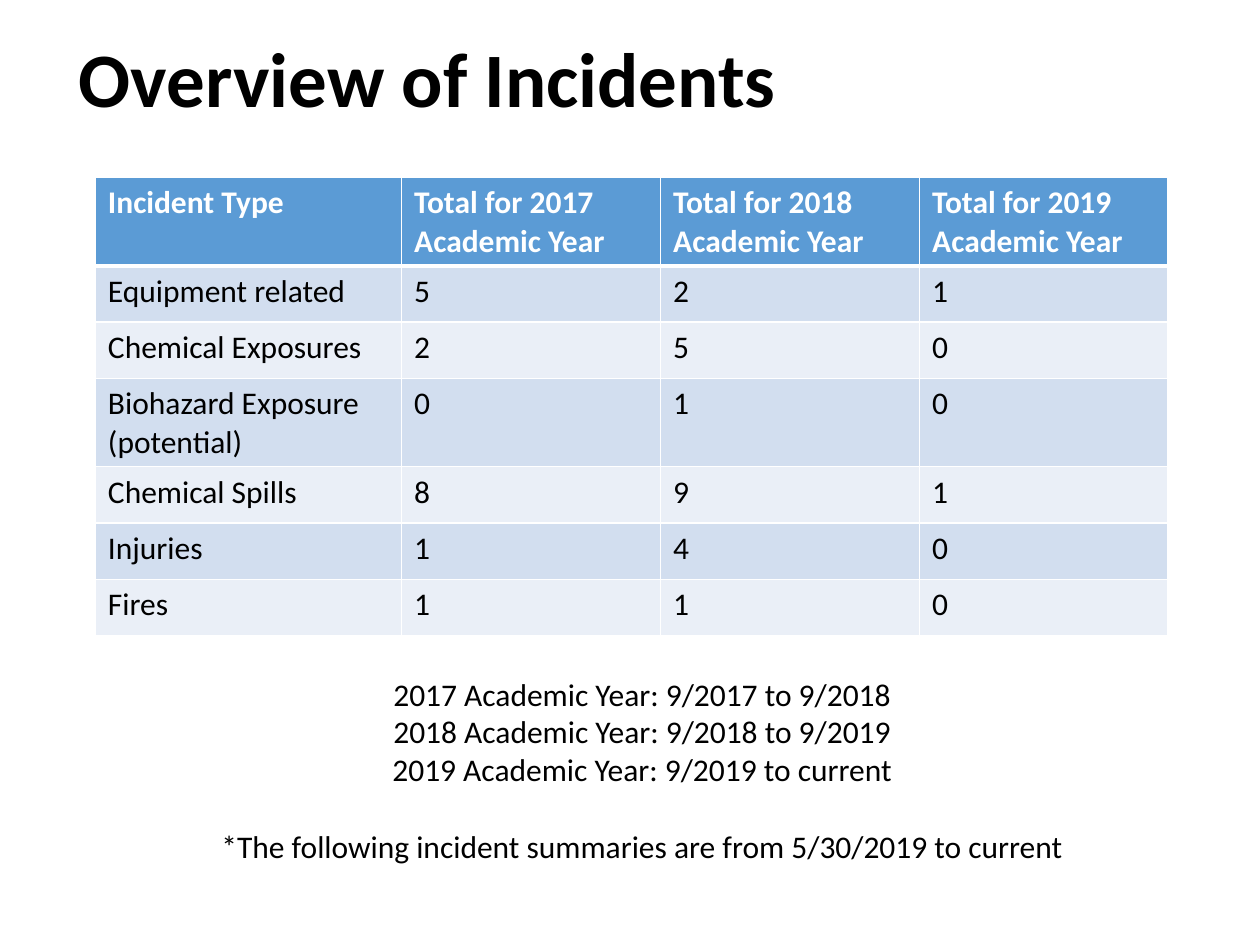
from dataclasses import dataclass

from lxml import etree
from pptx import Presentation
from pptx.dml.color import RGBColor
from pptx.enum.text import MSO_ANCHOR, PP_ALIGN
from pptx.oxml.ns import qn
from pptx.util import Pt

LEFT, CENTER = PP_ALIGN.LEFT, PP_ALIGN.CENTER
TOP, MIDDLE = MSO_ANCHOR.TOP, MSO_ANCHOR.MIDDLE


@dataclass(frozen=True)
class Theme:
    font: str = "Calibri"
    title: float = 44
    body: float = 18
    ink: str = "000000"
    paper: str = "FFFFFF"
    header: str = "5B9BD5"
    bands: tuple = ("D2DEEF", "EAEFF7")
    rule: float = 1
    header_rule: float = 3


def write(tf, text, *, font, size, color, bold=False, align=LEFT, spacing=None):
    for i, line in enumerate(text.split("\n")):
        p = tf.paragraphs[0] if i == 0 else tf.add_paragraph()
        p.alignment = align
        if spacing:
            p.line_spacing = spacing
        r = p.add_run()
        r.text = line
        r.font.name = font
        r.font.size = Pt(size)
        r.font.bold = bold
        r.font.color.rgb = RGBColor.from_string(color)


def border(cell, side, width, color):
    ln = etree.SubElement(cell._tc.get_or_add_tcPr(), qn("a:ln" + side), w=str(Pt(width)))
    fill = etree.SubElement(ln, qn("a:solidFill"))
    etree.SubElement(fill, qn("a:srgbClr"), val=color)


class Builder:
    def __init__(self, s, theme):
        self.s = s
        self.theme = theme

    def text(self, x, y, w, h, text, anchor=TOP, **fmt):
        sp = self.s.shapes.add_textbox(Pt(x), Pt(y), Pt(w), Pt(h))
        tf = sp.text_frame
        tf.word_wrap = True
        tf.vertical_anchor = anchor
        write(tf, text, **{"font": self.theme.font, "size": self.theme.body,
                           "color": self.theme.ink, **fmt})
        return tf

    def table(self, x, y, widths, row_height, rows):
        frame = self.s.shapes.add_table(len(rows), len(widths), Pt(x), Pt(y),
                                        Pt(sum(widths)), Pt(row_height * len(rows)))
        table = frame.table
        for col, width in zip(table.columns, widths):
            col.width = Pt(width)
        for i, values in enumerate(rows):
            table.rows[i].height = Pt(row_height)
            for j, value in enumerate(values):
                self.cell(table.cell(i, j), i, str(value))

    def cell(self, cell, row, text):
        t = self.theme
        is_header = row == 0
        widths = {"L": t.rule, "R": t.rule,
                  "T": t.header_rule if row == 1 else t.rule,
                  "B": t.header_rule if is_header else t.rule}
        for side, width in widths.items():
            border(cell, side, width, t.paper)
        cell.fill.solid()
        color = t.header if is_header else t.bands[(row - 1) % len(t.bands)]
        cell.fill.fore_color.rgb = RGBColor.from_string(color)
        write(cell.text_frame, text, font=t.font, size=t.body, bold=is_header,
              color=t.paper if is_header else t.ink)


def main():
    prs = Presentation()
    prs.slide_width, prs.slide_height = Pt(720), Pt(540)
    s = prs.slides.add_slide(prs.slide_layouts[6])
    theme = Theme()
    b = Builder(s, theme)

    b.text(38, 11, 620, 72, "Overview of Incidents", anchor=MIDDLE,
           size=theme.title, bold=True, spacing=0.9)

    header = ["Incident Type"] + [f"Total for {year} Academic Year" for year in (2017, 2018, 2019)]
    b.table(54.5, 101.5, [175, 148, 148, 142], 32.2, [
        header,
        ("Equipment related", 5, 2, 1),
        ("Chemical Exposures", 2, 5, 0),
        ("Biohazard Exposure\n(potential)", 0, 1, 0),
        ("Chemical Spills", 8, 9, 1),
        ("Injuries", 1, 4, 0),
        ("Fires", 1, 1, 0),
    ])

    notes = b.text(110, 382, 514, 138,
                   "2017 Academic Year: 9/2017 to 9/2018\n"
                   "2018 Academic Year: 9/2018 to 9/2019\n"
                   "2019 Academic Year: 9/2019 to current\n"
                   "*The following incident summaries are from 5/30/2019 to current",
                   align=CENTER)
    notes.paragraphs[-1].space_before = Pt(22)

    prs.save("out.pptx")


if __name__ == "__main__":
    main()
